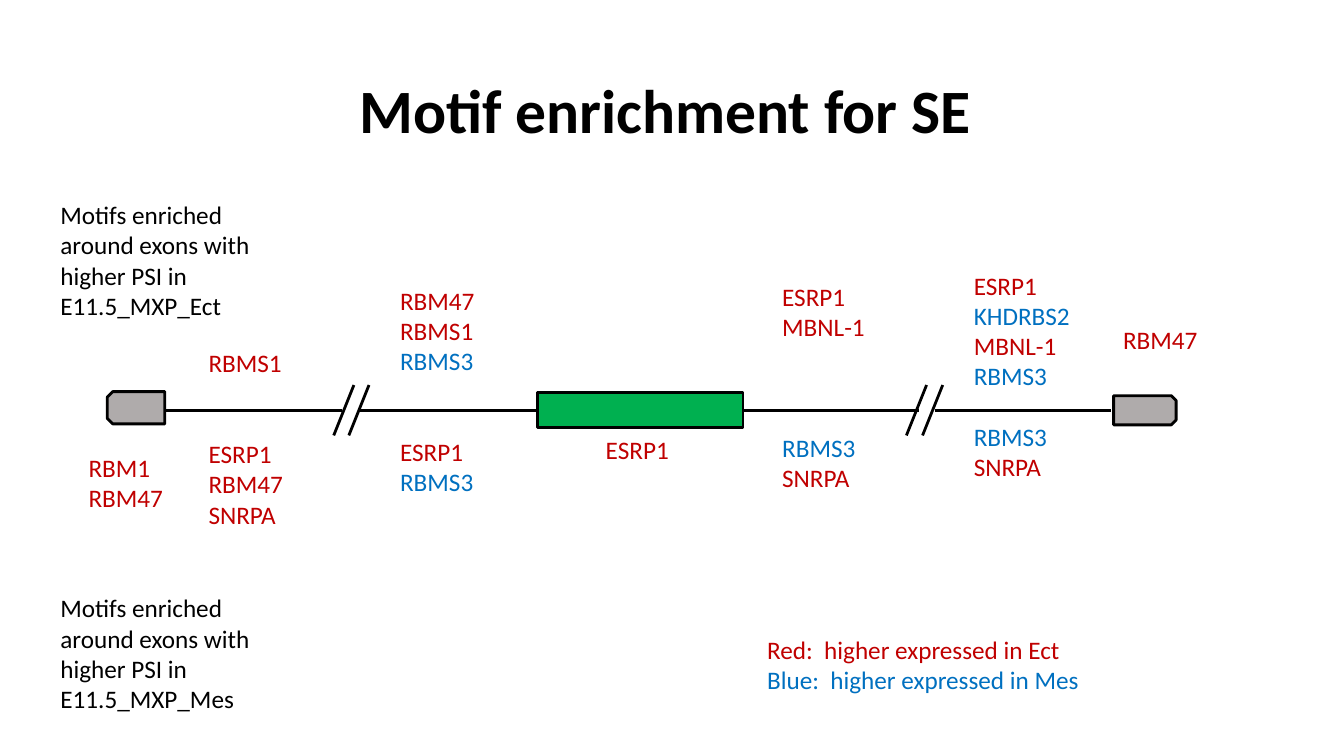
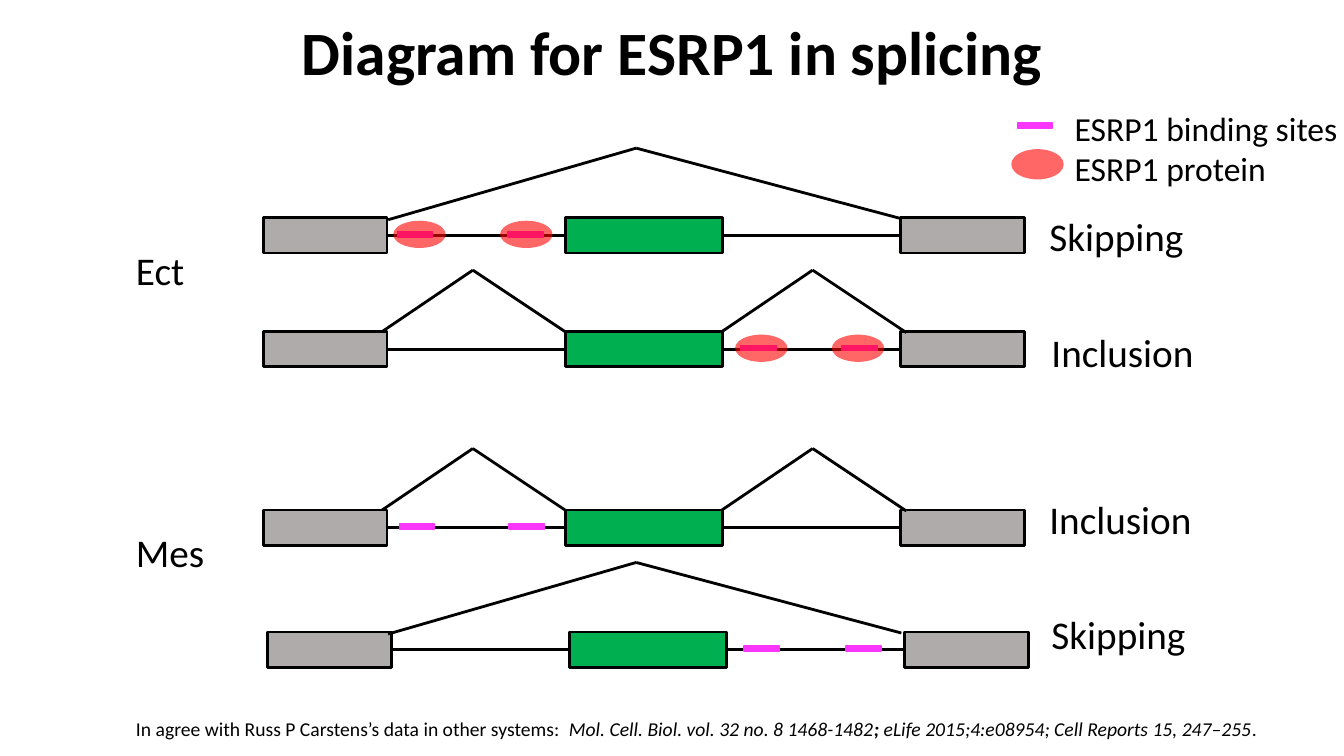
"""Build two slides on splicing motifs and the ESRP1 model."""
from itertools import pairwise

from lxml import etree
from pptx import Presentation
from pptx.dml.color import RGBColor
from pptx.enum.shapes import MSO_CONNECTOR, MSO_SHAPE as SHAPE
from pptx.enum.text import MSO_ANCHOR, PP_ALIGN
from pptx.oxml.ns import qn
from pptx.util import Inches, Pt

BLACK = RGBColor(0x00, 0x00, 0x00)
GREEN = RGBColor(0x00, 0xB0, 0x50)
GRAY = RGBColor(0xAF, 0xAB, 0xAB)
ECT_RED = RGBColor(0xC0, 0x00, 0x00)
MES_BLUE = RGBColor(0x00, 0x70, 0xC0)
SITE_PINK = RGBColor(0xFA, 0x36, 0xFC)
PROTEIN_RED = RGBColor(0xFF, 0x00, 0x00)
FONT = "Calibri"
MES_HIGHER = {"RBMS3", "KHDRBS2"}
EXON_HEIGHT = 0.35


class Deck:
    """Hold the shared style and the slide being drawn."""

    def __init__(self):
        self.prs = Presentation()
        self.prs.slide_width, self.prs.slide_height = Inches(13.33), Inches(7.5)
        self.slide = None

    def new_slide(self, title, top):
        self.slide = self.prs.slides.add_slide(self.prs.slide_layouts[6])
        frame = self.text_frame(0.92, top, 11.5, 1.45)
        frame.vertical_anchor = MSO_ANCHOR.MIDDLE
        heading = frame.paragraphs[0]
        heading.text = title
        heading.alignment = PP_ALIGN.CENTER
        heading.line_spacing = 0.9
        self.style(heading, 44, BLACK)
        heading.font.bold = True

    def text_frame(self, left, top, width, height):
        box = self.slide.shapes.add_textbox(*map(Inches, (left, top, width, height)))
        box.text_frame.word_wrap = True
        return box.text_frame

    def style(self, paragraph, size, color):
        paragraph.font.name = FONT
        paragraph.font.size = Pt(size)
        paragraph.font.color.rgb = color

    def label(self, left, top, width, lines, size, colors=None):
        frame = self.text_frame(left, top, width, 0.1 + len(lines) * size / 60)
        frame.margin_right = 0
        for index, line in enumerate(lines):
            paragraph = frame.add_paragraph() if index else frame.paragraphs[0]
            paragraph.text = line
            self.style(paragraph, size, colors[index] if colors else BLACK)

    def motifs(self, left, top, names):
        colors = [MES_BLUE if name in MES_HIGHER else ECT_RED for name in names]
        self.label(left, top, 1.4, names, 18, colors)

    def citation(self, left, top, width, parts, size):
        paragraph = self.text_frame(left, top, width, 0.34).paragraphs[0]
        self.style(paragraph, size, BLACK)
        for text, italic, bold in parts:
            run = paragraph.add_run()
            run.text = text
            run.font.italic, run.font.bold = italic, bold

    def block(self, kind, left, top, width, height, fill, line=BLACK, weight=2):
        shape = self.slide.shapes.add_shape(kind, *map(Inches, (left, top, width, height)))
        shape.shadow.inherit = False
        shape.fill.solid()
        shape.fill.fore_color.rgb = fill
        if line is None:
            shape.line.fill.background()
        else:
            shape.line.color.rgb = line
            shape.line.width = Pt(weight)
        return shape

    def exon(self, left, top, width, fill):
        return self.block(SHAPE.RECTANGLE, left, top, width, EXON_HEIGHT, fill)

    def end_exon(self, left, top, width, height, rotation):
        cap = self.block(SHAPE.SNIP_2_SAME_RECTANGLE, left, top, width, height, GRAY)
        cap.rotation = rotation

    def site(self, left, top):
        self.block(SHAPE.RECTANGLE, left, top, 0.35, 0.05, SITE_PINK, SITE_PINK, 1)

    def protein(self, left, top, height=0.27):
        oval = self.block(SHAPE.OVAL, left, top, 0.52, height, PROTEIN_RED, None)
        color = oval.fill._xPr.find(qn("a:solidFill"))[0]
        etree.SubElement(color, qn("a:alpha"), val="60000")

    def line(self, start, end, begin_exon=None, end_exon=None):
        line = self.slide.shapes.add_connector(
            MSO_CONNECTOR.STRAIGHT, *map(Inches, (*start, *end)))
        line.line.color.rgb = BLACK
        line.line.width = Pt(2)
        etree.SubElement(line._element.spPr, qn("a:effectLst"))
        if begin_exon is not None:
            line.begin_connect(begin_exon, 3)
        if end_exon is not None:
            line.end_connect(end_exon, 1)

    def polyline(self, points):
        for start, end in pairwise(points):
            self.line(start, end)


def motif_slide(deck):
    deck.new_slide("Motif enrichment for SE ", 0.4)
    axis = 4.07
    cassette = deck.exon(5.33, axis - EXON_HEIGHT / 2, 2.04, GREEN)
    deck.end_exon(1.19, 3.76, 0.32, 0.57, 270)
    deck.end_exon(11.21, 3.76, 0.29, 0.62, 90)
    for left in (3.31, 3.46, 8.99, 9.15):
        deck.line((left + 0.2, axis - 0.25), (left, axis + 0.25))
    deck.line((1.64, axis), (3.39, axis))
    deck.line((3.57, axis), (5.33, axis), end_exon=cassette)
    deck.line((7.37, axis), (9.12, axis), begin_exon=cassette)
    deck.line((9.27, axis), (11.02, axis))

    for left, top, names in (
        (0.78, 4.44, ["RBM1", "RBM47"]),
        (1.97, 3.4, ["RBMS1"]),
        (1.97, 4.3, ["ESRP1", "RBM47", "SNRPA"]),
        (3.87, 2.78, ["RBM47", "RBMS1", "RBMS3"]),
        (3.87, 4.28, ["ESRP1", "RBMS3"]),
        (5.91, 4.26, ["ESRP1"]),
        (7.66, 2.74, ["ESRP1", "MBNL-1"]),
        (7.66, 4.24, ["RBMS3", "SNRPA"]),
        (9.56, 2.63, ["ESRP1", "KHDRBS2", "MBNL-1", "RBMS3"]),
        (9.56, 4.13, ["RBMS3", "SNRPA"]),
        (11.04, 3.17, ["RBM47"]),
    ):
        deck.motifs(left, top, names)

    for top, tissue in ((1.93, "Ect"), (5.83, "Mes")):
        note = f"Motifs enriched around exons with higher PSI in E11.5_MXP_{tissue}"
        deck.label(0.5, top, 2.11, [note], 18)
    key = ["Red:  higher expressed in Ect", "Blue:  higher expressed in Mes"]
    deck.label(7.51, 6.24, 4.72, key, 18, [ECT_RED, MES_BLUE])


def transcript(deck, top, shift, outcome, sites, proteins=()):
    upstream = deck.exon(2.61 + shift, top, 1.23, GRAY)
    cassette = deck.exon(5.61 + shift, top, 1.56, GREEN)
    downstream = deck.exon(8.93 + shift, top, 1.23, GRAY)
    middle = top + EXON_HEIGHT / 2
    deck.line((3.84 + shift, middle), (5.61 + shift, middle), upstream, cassette)
    deck.line((7.17 + shift, middle), (8.93 + shift, middle), cassette, downstream)
    if outcome == "Skipping":
        deck.polyline([(3.85, top + 0.02), (6.31, top - 0.69), (8.94, top + 0.01)])
    else:
        for left in (3.79, 7.16):
            deck.polyline([(left, top), (left + 0.9, top - 0.61), (left + 1.83, top + 0.01)])
    for left in sites:
        deck.site(left, top + 0.14)
    for left in proteins:
        deck.protein(left, top + 0.03)


def splicing_slide(deck):
    deck.new_slide("Diagram for ESRP1 in splicing", -0.17)
    transcript(deck, 2.16, 0, "Skipping", (3.94, 5.04), (3.9, 4.96))
    transcript(deck, 3.29, 0, "Inclusion", (7.35, 8.35), (7.29, 8.25))
    transcript(deck, 5.06, 0, "Inclusion", (3.96, 5.05))
    transcript(deck, 6.27, 0.04, "Skipping", (7.38, 8.39))

    for left, top, text in (
        (1.25, 2.39, "Ect"),
        (1.25, 5.19, "Mes"),
        (10.31, 2.06, "Skipping"),
        (10.33, 3.21, "Inclusion"),
        (10.31, 4.86, "Inclusion"),
        (10.33, 6.01, "Skipping"),
    ):
        deck.label(left, top, 2.6, [text], 28)

    deck.site(10.09, 1.22)
    deck.protein(10.03, 1.48, 0.3)
    deck.label(10.56, 1.02, 2.77, ["ESRP1 binding sites", "ESRP1 protein"], 24)
    deck.citation(1.25, 7.06, 11.4, (
        ("In agree with Russ P Carstens’s data in other systems:  ", False, False),
        ("Mol. Cell. Biol. vol. 32 no. 8 1468-1482", True, False),
        ("; ", True, True),
        ("eLife 2015;4:e08954; Cell Reports 15, 247–255", True, False),
        (".", False, False),
    ), 14)


def main():
    deck = Deck()
    motif_slide(deck)
    splicing_slide(deck)
    deck.prs.save("out.pptx")


if __name__ == "__main__":
    main()
